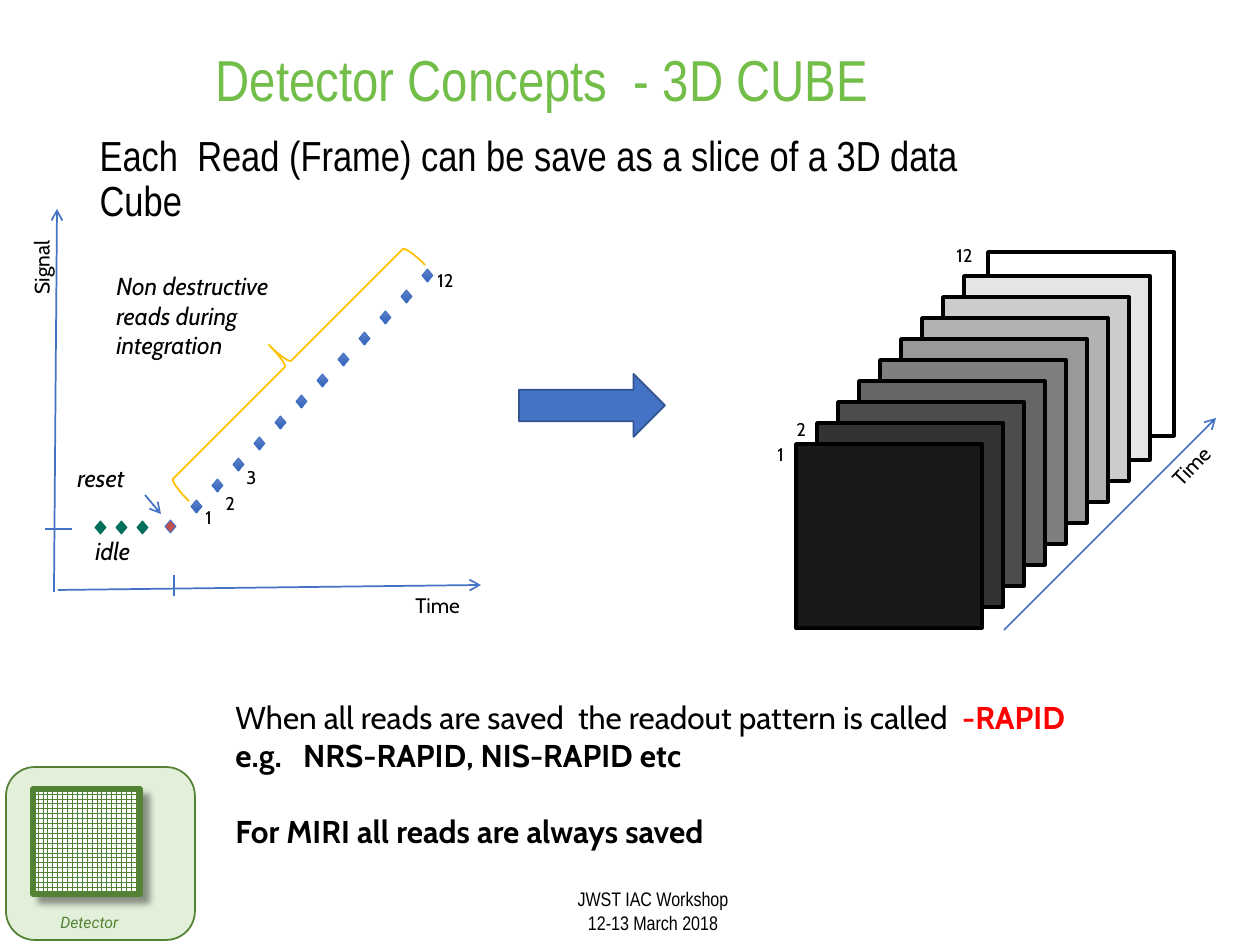
from pptx import Presentation
from pptx.dml.color import RGBColor
from pptx.enum.dml import MSO_PATTERN
from pptx.enum.shapes import MSO_CONNECTOR, MSO_SHAPE as SHAPE
from pptx.enum.text import MSO_ANCHOR as ANCHOR, MSO_AUTO_SIZE as AUTO, PP_ALIGN as ALIGN
from pptx.oxml.ns import qn
from pptx.oxml.xmlchemy import OxmlElement
from pptx.util import Emu, Pt

PX = 914400 / 126
COLORS = {
    "black": "000000", "white": "FFFFFF", "title": "72BE49", "red": "FF0000",
    "blue": "4472C4", "blue_edge": "325491", "blue_top": "6183CB", "blue_low": "3062BB",
    "gold": "FFC000", "reset": "C0504D", "idle": "00705C",
    "green": "548235", "pale_green": "E2F0D9",
}


def emu(*lengths):
    return [Emu(round(length * PX)) for length in lengths]


def rgb(color):
    return RGBColor.from_string(COLORS.get(color, color))


def child(parent, tag, **attributes):
    element = OxmlElement(tag)
    for name, value in attributes.items():
        element.set(name, str(value))
    parent.append(element)
    return element


def write(frame, text, size=18, font="Cabin", color="black", bold=False, italic=False,
          align=ALIGN.LEFT, before=0, spacing=None, same_line=False):
    """Add text as a new paragraph, or as a further run of the last one."""
    if frame.text and not same_line:
        frame.add_paragraph()
    paragraph = frame.paragraphs[-1]
    if not same_line:
        paragraph.alignment = align
        paragraph.space_before = Pt(before)
        if spacing:
            paragraph.line_spacing = spacing
    run = paragraph.add_run()
    run.text = text
    run.font.name, run.font.size = font, Pt(size)
    run.font.bold, run.font.italic = bold, italic
    run.font.color.rgb = rgb(color)


class Board:
    def __init__(self, slide):
        self.slide = slide

    def placeholder(self, index, box, text, **style):
        holder = self.slide.placeholders[index]
        holder.left, holder.top, holder.width, holder.height = emu(*box)
        frame = holder.text_frame
        frame.word_wrap, frame.auto_size = True, AUTO.NONE
        frame.vertical_anchor = ANCHOR.TOP
        write(frame, text, spacing=0.9, font="Arial Narrow", **style)

    def text(self, box, *lines, rotation=0, wrap=False, **style):
        label = self.slide.shapes.add_textbox(*emu(*box))
        label.rotation = rotation
        frame = label.text_frame
        frame.word_wrap = wrap
        frame.auto_size = AUTO.NONE if wrap else AUTO.SHAPE_TO_FIT_TEXT
        for line in lines:
            write(frame, line, **style)
        return frame

    def shape(self, kind, box, fill=None, line="black", width=1, rotation=0):
        item = self.slide.shapes.add_shape(kind, *emu(*box))
        item.shadow.inherit = False
        item.rotation = rotation
        if fill:
            item.fill.solid()
            item.fill.fore_color.rgb = rgb(fill)
        else:
            item.fill.background()
        item.line.color.rgb = rgb(line)
        item.line.width = Pt(width)
        return item

    def diamond(self, x, y, fill, line="blue"):
        return self.shape(SHAPE.DIAMOND, (x, y, 11, 13), fill, line, 0.5)

    def line(self, start, end, arrow=False):
        link = self.slide.shapes.add_connector(MSO_CONNECTOR.STRAIGHT, *emu(*start, *end))
        link.line.color.rgb = rgb("blue")
        link.line.width = Pt(1)
        if arrow:
            child(link.line._get_or_add_ln(), "a:tailEnd", type="arrow")
        child(link._element.spPr, "a:effectLst")

    def number(self, value, x, y):
        self.text((x, y, 38 if value < 10 else 49, 36), str(value), size=10.5)


def draw_detector(board):
    board.shape(SHAPE.ROUNDED_RECTANGLE, (6, 767, 189, 173), "pale_green", "green")
    pixels = board.shape(SHAPE.RECTANGLE, (33, 789, 107, 105), "white", "green", 3)
    pixels.fill.patterned()
    pixels.fill.pattern = MSO_PATTERN.LARGE_GRID
    pixels.fill.fore_color.rgb = rgb("green")
    pixels.fill.back_color.rgb = rgb("white")
    effects = pixels._element.spPr.find(qn("a:effectLst"))
    shadow = child(effects, "a:outerShdw", blurRad=Pt(4), dist=Pt(6), dir=45 * 60000,
                   algn="tl", rotWithShape=0)
    child(child(shadow, "a:srgbClr", val=COLORS["black"]), "a:alpha", val=40000)
    board.text((48, 907, 140, 32), "Detector", size=9, font="Roboto", color="green", italic=True)


def draw_ramp(board):
    board.text((-4, 242, 91, 38), "Signal", size=12, rotation=270)
    # Twelve reads up the ramp
    for read in range(12):
        point = board.diamond(191 + 21 * read, 500 - 21 * read, "blue")
        point.fill.gradient()
        point.fill.gradient_angle = 270
        for stop, color in zip(point.fill.gradient_stops, ("blue_top", "blue_low")):
            stop.color.rgb = rgb(color)
    # Reset and idle points
    board.diamond(165, 520, "reset")
    for idle in range(3):
        board.diamond(95 + 21 * idle, 521, "idle", "idle")
    board.text((83, 530, 77, 43), "idle", size=14, italic=True)
    board.text((65, 457, 96, 43), "reset", size=14, italic=True)
    board.text((104, 265, 228, 102), "Non destructive", "reads during", "integration",
               size=14, italic=True)
    board.line((145, 495), (161, 514), arrow=True)
    board.shape(SHAPE.LEFT_BRACE, (261, 197, 54, 334), line="gold", rotation=45)
    # Axes and ticks
    board.line((58, 590), (481, 585), arrow=True)
    board.line((54, 592), (57, 209), arrow=True)
    board.text((403, 586, 78, 38), "Time", size=12)
    board.line((174, 575), (174, 596))
    board.line((72, 529), (45, 529))
    for value, x, y in ((1, 193, 500), (2, 213, 486), (3, 234, 460), (12, 425, 263)):
        board.number(value, x, y)


def draw_cube(board):
    # Slices from back to front, the last read set off a little more
    for depth in reversed(range(10)):
        offset = 21 * depth + (3 if depth == 9 else 0)
        gray = f"{int(25.5 * (depth + 1)):02X}" * 3
        board.shape(SHAPE.RECTANGLE, (796 + offset, 444 - offset, 186, 184), gray, width=2)
    board.line((1004, 630), (1216, 418), arrow=True)
    board.text((1155, 444, 78, 38), "Time", size=12, rotation=313.6)
    for value, x, y in ((1, 765, 437), (2, 784, 412), (12, 944, 238)):
        board.number(value, x, y)


def main():
    deck = Presentation()
    deck.slide_width, deck.slide_height = emu(1260, 945)
    board = Board(deck.slides.add_slide(deck.slide_layouts[0]))

    # Heading and footer
    board.placeholder(0, (203, 45, 858, 130), "Detector Concepts  - 3D CUBE",
                      size=33, color="title")
    board.placeholder(1, (87, 129, 936, 95),
                      "Each  Read (Frame) can be save as a slice of a 3D data Cube", size=24)
    board.text((483, 881, 340, 50), "JWST IAC Workshop", "12-13 March 2018", wrap=True,
               size=11.2, font="Arial Narrow", align=ALIGN.CENTER)

    draw_detector(board)
    draw_ramp(board)
    draw_cube(board)
    board.shape(SHAPE.RIGHT_ARROW, (519, 374, 146, 63), "blue", "blue_edge")

    # Readout pattern
    pattern = board.text((223, 692, 866, 165),
                         "When all reads are saved  the readout pattern is called  ")
    write(pattern, "-RAPID", color="red", bold=True, same_line=True)
    write(pattern, "e.g.   NRS-RAPID, NIS-RAPID etc", bold=True)
    write(pattern, "For MIRI all reads are always saved", bold=True, before=22)

    deck.save("out.pptx")


if __name__ == "__main__":
    main()
